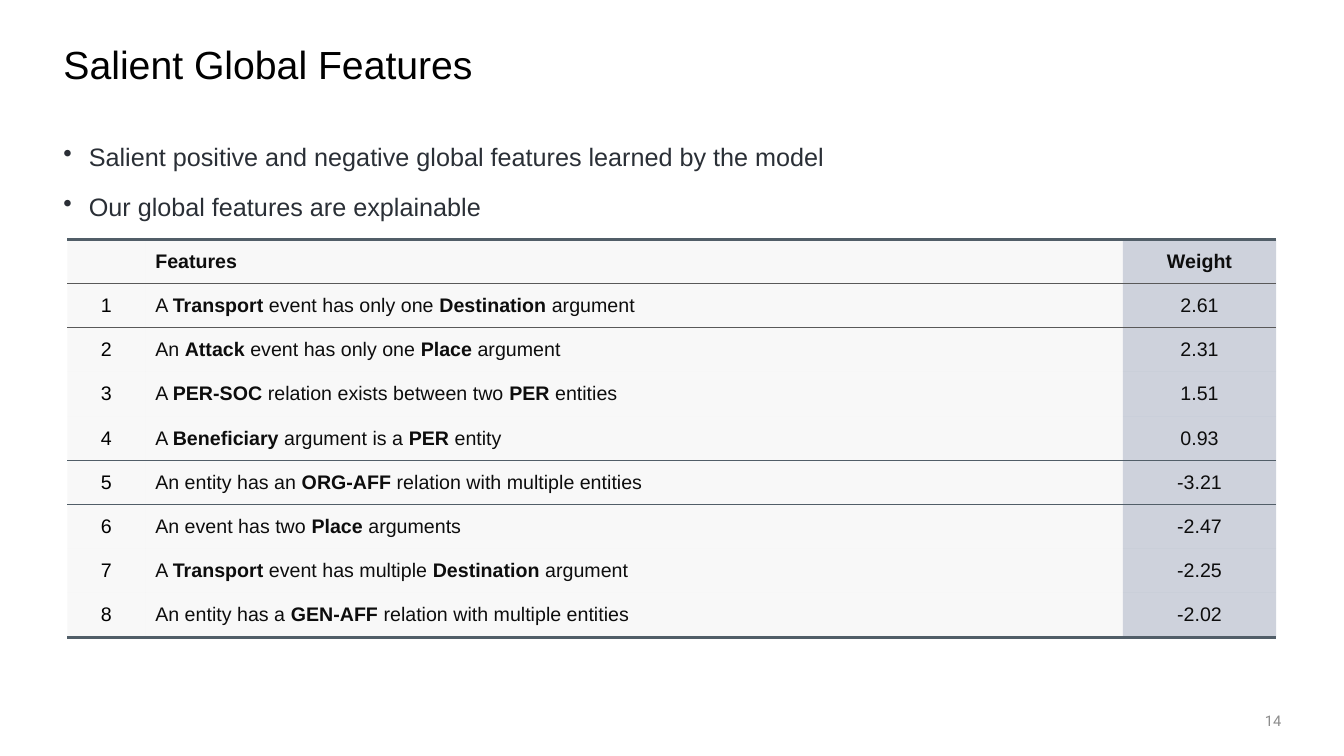
from lxml.etree import SubElement
from pptx import Presentation
from pptx.dml.color import RGBColor
from pptx.enum.text import MSO_ANCHOR, PP_ALIGN
from pptx.oxml.ns import qn
from pptx.util import Cm, Pt

SLATE, GREY, INK = "515E68", "595959", "0D0D0D"
NO_TABLE_STYLE = "{2D5ABB26-0587-4C30-8999-92F81FD0307C}"
COLUMN_WIDTHS = (1.96, 24.64, 3.86)
COLUMN_FILLS = ("F2F2F2", "F2F2F2", "9EA7BB")
COLUMN_COLOURS = ("000000", INK, INK)
COLUMN_ALIGNMENTS = (PP_ALIGN.CENTER, PP_ALIGN.LEFT, PP_ALIGN.CENTER)
TABLE_HEIGHT = 10.03

BULLETS = (
    "Salient positive and negative global features learned by the model",
    "Our global features are explainable",
)

# Words between asterisks are bold.
FEATURES = (
    ("A *Transport* event has only one *Destination* argument", "2.61"),
    ("An *Attack* event has only one *Place* argument", "2.31"),
    ("A *PER-SOC* relation exists between two *PER* entities", "1.51"),
    ("A *Beneficiary* argument is a *PER* entity", "0.93"),
    ("An entity has an *ORG-AFF* relation with multiple entities", "-3.21"),
    ("An event has two *Place *arguments", "-2.47"),
    ("A *Transport* event has multiple *Destination* argument", "-2.25"),
    ("An entity has a *GEN-AFF* relation with multiple entities", "-2.02"),
)
# Row number: (edge, colour, width in points)
RULES = {
    0: (("T", SLATE, 2.25), ("B", GREY, 1)),
    1: (("T", GREY, 1),),
    4: (("B", SLATE, 0.25),),
    5: (("T", SLATE, 0.25),),
    8: (("B", SLATE, 2.25),),
}


def colour(value):
    return RGBColor.from_string(value)


def set_font(paragraph, size, value, name="Arial"):
    paragraph.font.size = Pt(size)
    paragraph.font.name = name
    paragraph.font.color.rgb = colour(value)


def add_box(page, left, top, width, height, anchor=MSO_ANCHOR.TOP):
    box = page.shapes.add_textbox(Cm(left), Cm(top), Cm(width), Cm(height))
    frame = box.text_frame
    frame.word_wrap = True
    frame.vertical_anchor = anchor
    return frame


def add_title(page, text):
    paragraph = add_box(page, 1.35, 1.02, 31.19, 1.75).paragraphs[0]
    paragraph.text = text
    paragraph.line_spacing = 0.9
    set_font(paragraph, 28, "000000")


def add_bullets(page, lines):
    frame = add_box(page, 1.35, 3.28, 31.19, 2.69)
    for index, line in enumerate(lines):
        paragraph = frame.add_paragraph() if index else frame.paragraphs[0]
        paragraph.text = line
        properties = paragraph._p.get_or_add_pPr()
        properties.set("marL", str(Cm(0.64)))
        properties.set("indent", str(-Cm(0.64)))
        SubElement(properties, qn("a:buChar"), char="•")
        paragraph.line_spacing = 1.2
        if index:
            paragraph.space_before = Pt(10)
        set_font(paragraph, 18, "2A2F36")


def add_page_number(page, number):
    paragraph = add_box(page, 23.93, 17.65, 8.61, 1.02, MSO_ANCHOR.MIDDLE).paragraphs[0]
    paragraph.text = number
    paragraph.alignment = PP_ALIGN.RIGHT
    set_font(paragraph, 10.5, "8C8C8C", "Roboto")


def draw_rule(cell, edge, value, width):
    line = SubElement(cell._tc.get_or_add_tcPr(), qn(f"a:ln{edge}"), w=str(Pt(width)))
    fill = SubElement(line, qn("a:solidFill"))
    SubElement(fill, qn("a:srgbClr"), val=value)


def fill_half_transparent(cell, value):
    cell.fill.solid()
    cell.fill.fore_color.rgb = colour(value)
    fill = cell._tc.get_or_add_tcPr().find(qn("a:solidFill"))
    SubElement(fill[0], qn("a:alpha"), val="50000")


def write_cell(cell, text, value, alignment, header):
    cell.vertical_anchor = MSO_ANCHOR.MIDDLE
    paragraph = cell.text_frame.paragraphs[0]
    paragraph.alignment = alignment
    set_font(paragraph, 14, value)
    for index, part in enumerate(text.split("*")):
        if part:
            span = paragraph.add_run()
            span.text = part
            span.font.bold = header or index % 2 == 1


def add_feature_table(page):
    rows = [("", "Features", "Weight")]
    rows += [(str(rank), *feature) for rank, feature in enumerate(FEATURES, 1)]
    shape = page.shapes.add_table(
        len(rows), len(COLUMN_WIDTHS), Cm(1.7), Cm(6.03),
        Cm(sum(COLUMN_WIDTHS)), Cm(TABLE_HEIGHT))
    table = shape.table
    table._tbl.tblPr.find(qn("a:tableStyleId")).text = NO_TABLE_STYLE
    table.horz_banding = False
    for column, width in zip(table.columns, COLUMN_WIDTHS):
        column.width = Cm(width)
    for row_index, texts in enumerate(rows):
        header = row_index == 0
        table.rows[row_index].height = Cm(TABLE_HEIGHT / len(rows))
        for column_index, text in enumerate(texts):
            cell = table.cell(row_index, column_index)
            for rule in RULES.get(row_index, ()):
                draw_rule(cell, *rule)
            fill_half_transparent(cell, COLUMN_FILLS[column_index])
            write_cell(cell, text, COLUMN_COLOURS[column_index],
                       COLUMN_ALIGNMENTS[column_index], header)


def main():
    deck = Presentation()
    deck.slide_width, deck.slide_height = Cm(33.87), Cm(19.05)
    page = deck.slides.add_slide(deck.slide_layouts[6])
    add_title(page, "Salient Global Features")
    add_bullets(page, BULLETS)
    add_page_number(page, "14")
    add_feature_table(page)
    deck.save("out.pptx")


if __name__ == "__main__":
    main()
